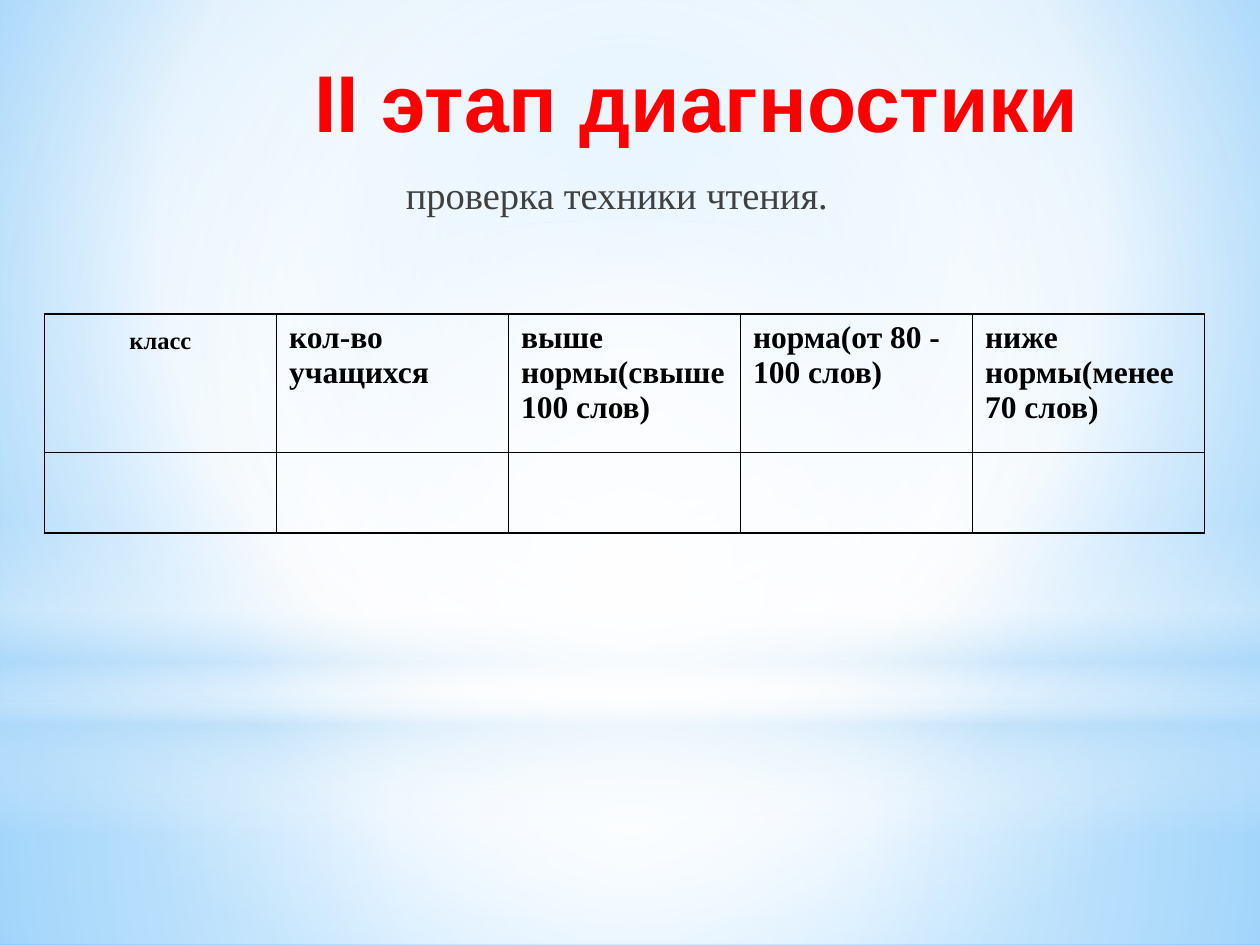
from lxml import etree
from pptx import Presentation
from pptx.dml.color import RGBColor
from pptx.enum.shapes import MSO_SHAPE as SHAPE
from pptx.enum.text import MSO_ANCHOR as ANCHOR, PP_ALIGN as ALIGN
from pptx.oxml import parse_xml
from pptx.oxml.ns import nsdecls, qn
from pptx.util import Pt

COLORS = {
    "white": "FFFFFF", "pale": "B4DCFA", "sky": "9ED5FF", "deep": "5BB9FF",
    "title": "FF0000", "subtitle": "404040", "black": "000000",
}
SERIF = "Times New Roman"
CENTER = (50, 50, 50, 50)
HEADERS = ["класс", "кол-во учащихся", "выше нормы(свыше 100 слов)",
           "норма(от 80 - 100 слов)", "ниже нормы(менее 70 слов)"]

# Shape, box, gradient stops (position, colour, opacity), focus rectangle
BACKDROP = [
    (SHAPE.RECTANGLE, (0, 402, 720, 138),
     [(0, "white", 91), (37, "white", 76), (100, "pale", 79)], CENTER),
    (SHAPE.RECTANGLE, (0, 0, 720, 402),
     [(0, "white", 89), (48, "white", 62), (100, "pale", 79)], CENTER),
    (SHAPE.RECTANGLE, (0, 297, 720, 180),
     [(0, "white", 0), (29, "white", 30), (45, "pale", 40),
      (55, "white", 26), (65, "pale", 60), (100, "white", 0)], None),
    (SHAPE.OVAL, (0, 126, 720, 402),
     [(0, "white", 100), (56, "white", 0)], CENTER),
]


def set_gradient(fill, properties, stops, focus):
    """Circular gradient around focus, or a vertical one without it."""
    fill.solid()
    stop_xml = "".join(
        f'<a:gs pos="{pos * 1000}"><a:srgbClr val="{COLORS[color]}">'
        f'<a:alpha val="{opacity * 1000}"/></a:srgbClr></a:gs>'
        for pos, color, opacity in stops)
    if focus:
        sides = " ".join(f'{side}="{value * 1000}"'
                         for side, value in zip("ltrb", focus))
        direction = f'<a:path path="circle"><a:fillToRect {sides}/></a:path>'
    else:
        direction = '<a:lin ang="5400000" scaled="0"/>'
    gradient = parse_xml(
        f'<a:gradFill {nsdecls("a")} rotWithShape="1">'
        f'<a:gsLst>{stop_xml}</a:gsLst>{direction}</a:gradFill>')
    properties.replace(properties.find(qn("a:solidFill")), gradient)


def add_backdrop(slide):
    set_gradient(slide.background.fill, slide._element.find(f".//{qn('p:bgPr')}"),
                 [(0, "sky", 100), (60, "white", 100), (100, "deep", 100)],
                 (20, 10, 20, 60))
    for kind, box, stops, focus in BACKDROP:
        glow = slide.shapes.add_shape(kind, *map(Pt, box))
        glow.shadow.inherit = False
        glow.line.fill.background()
        set_gradient(glow.fill, glow._element.spPr, stops, focus)


def write(frame, text, color, paragraph_format, **font_format):
    paragraph = frame.paragraphs[0]
    run = paragraph.add_run()
    run.text = text
    run.font.color.rgb = RGBColor.from_string(COLORS[color])
    for target, values in ((paragraph, paragraph_format), (run.font, font_format)):
        for name, value in values.items():
            setattr(target, name, value)


def add_title(slide):
    title = slide.shapes.title
    box = {"left": 111, "top": 26, "width": 512.5, "height": 113}
    for name, value in box.items():
        setattr(title, name, Pt(value))
    title.text_frame.vertical_anchor = ANCHOR.TOP
    title.text_frame.word_wrap = True
    write(title.text_frame, "II этап диагностики", "title",
          {"alignment": ALIGN.RIGHT}, name="Arial", size=Pt(46), bold=True)
    # Bring the title in front of the backdrop
    slide.shapes._spTree.append(title._element)


def add_subtitle(slide):
    subtitle = slide.shapes.add_textbox(Pt(156), Pt(94), Pt(380), Pt(51))
    subtitle.text_frame.word_wrap = True
    subtitle.text_frame.margin_left = Pt(76)
    write(subtitle.text_frame, "проверка техники чтения.", "subtitle",
          {"space_before": Pt(2)}, name=SERIF, size=Pt(22))


def outline_cell(cell):
    properties = cell._tc.get_or_add_tcPr()
    for side in ("lnL", "lnR", "lnT", "lnB"):
        line = etree.SubElement(properties, qn(f"a:{side}"), w=str(Pt(1)))
        fill = etree.SubElement(line, qn("a:solidFill"))
        etree.SubElement(fill, qn("a:srgbClr"), val=COLORS["black"])
    cell.fill.background()


def add_results_table(slide):
    table = slide.shapes.add_table(2, len(HEADERS), Pt(25.4), Pt(179.4),
                                   Pt(663), Pt(125.2)).table
    for row, height in zip(table.rows, (79.2, 46)):
        row.height = Pt(height)
    for cell in table.iter_cells():
        outline_cell(cell)

    for column, header in enumerate(HEADERS):
        cell = table.cell(0, column)
        layout, size = {}, 18
        if column == 0:
            layout, size = {"alignment": ALIGN.CENTER, "line_spacing": 1.5}, 14
            margins = {"margin_left": 5, "margin_right": 5,
                       "margin_top": 0, "margin_bottom": 0}
            for name, value in margins.items():
                setattr(cell, name, Pt(value))
        write(cell.text_frame, header, "black", layout,
              name=SERIF, size=Pt(size), bold=True)


def main():
    deck = Presentation()
    deck.slide_width, deck.slide_height = Pt(720), Pt(540)
    slide = deck.slides.add_slide(deck.slide_layouts[5])
    add_backdrop(slide)
    add_title(slide)
    add_subtitle(slide)
    add_results_table(slide)
    deck.save("out.pptx")


if __name__ == "__main__":
    main()
